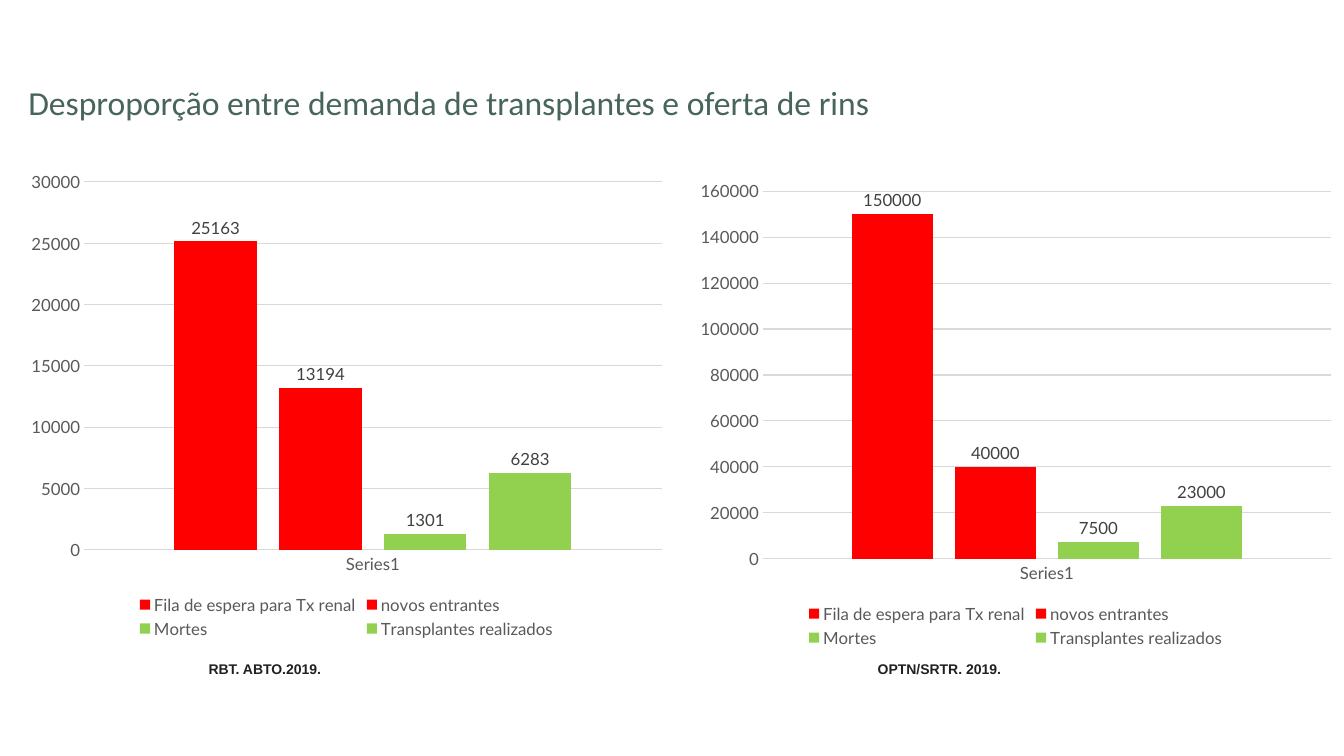
from dataclasses import dataclass

from pptx import Presentation
from pptx.chart.data import CategoryChartData
from pptx.dml.color import RGBColor
from pptx.enum.chart import XL_CHART_TYPE, XL_LABEL_POSITION, XL_LEGEND_POSITION, XL_TICK_MARK
from pptx.enum.text import MSO_ANCHOR, MSO_AUTO_SIZE, PP_ALIGN
from pptx.util import Pt

COLUMNS = XL_CHART_TYPE.COLUMN_CLUSTERED
LABEL_ABOVE = XL_LABEL_POSITION.OUTSIDE_END
LEGEND_BELOW = XL_LEGEND_POSITION.BOTTOM
NO_TICK = XL_TICK_MARK.NONE
TOP = MSO_ANCHOR.TOP
NO_AUTOFIT = MSO_AUTO_SIZE.NONE
LEFT = PP_ALIGN.LEFT


@dataclass(frozen=True)
class Theme:
    """Colours, fonts and type sizes of the slide."""
    title_color: str = "476559"
    axis_color: str = "595959"
    label_color: str = "404040"
    source_color: str = "212121"
    grid_color: str = "D9D9D9"
    demand_color: str = "FF0000"
    supply_color: str = "92D050"
    title_font: str = "Calibri"
    chart_font: str = "Lato"
    source_font: str = "Arial"
    title_size: float = 24
    chart_size: float = 12
    source_size: float = 10


THEME = Theme()
SERIES = (
    ("Fila de espera para Tx renal", THEME.demand_color),
    ("novos entrantes", THEME.demand_color),
    ("Mortes", THEME.supply_color),
    ("Transplantes realizados", THEME.supply_color),
)
PANELS = (
    (13, 116, (25163, 13194, 1301, 6283), 30000, 5000, "RBT. ABTO.2019."),
    (491, 122.5, (150000, 40000, 7500, 23000), 160000, 20000, "OPTN/SRTR. 2019."),
)
SOURCE_OFFSET = 126


def style_font(font, name, size, color, bold=False):
    """Apply a typeface, size, colour and weight to a font."""
    font.name = name
    font.size = Pt(size)
    font.bold = bold
    font.color.rgb = RGBColor.from_string(color)


def style_chart_font(font, color=THEME.axis_color):
    """Apply the common chart typeface and size."""
    style_font(font, THEME.chart_font, THEME.chart_size, color)


def style_line(line):
    """Draw a thin line in the grid colour."""
    line.color.rgb = RGBColor.from_string(THEME.grid_color)
    line.width = Pt(0.75)


def add_title(slide, text):
    """Fill and place the title placeholder."""
    title = slide.shapes.title
    title.left, title.top, title.width, title.height = Pt(13), Pt(22.5), Pt(652), Pt(80)
    frame = title.text_frame
    frame.text = text
    frame.auto_size = NO_AUTOFIT
    frame.vertical_anchor = TOP
    paragraph = frame.paragraphs[0]
    paragraph.alignment = LEFT
    paragraph.line_spacing = Pt(61.3)
    style_font(paragraph.runs[0].font, THEME.title_font, THEME.title_size, THEME.title_color)


def style_axes(chart, maximum, step):
    """Format both axes and the horizontal grid."""
    for axis in (chart.category_axis, chart.value_axis):
        axis.major_tick_mark = NO_TICK
        axis.minor_tick_mark = NO_TICK
        style_chart_font(axis.tick_labels.font)
    style_line(chart.category_axis.format.line)
    value_axis = chart.value_axis
    value_axis.minimum_scale = 0
    value_axis.maximum_scale = maximum
    value_axis.major_unit = step
    value_axis.format.line.fill.background()
    style_line(value_axis.major_gridlines.format.line)


def style_series(series, color):
    """Colour one series and show its values above the bars."""
    series.invert_if_negative = False
    series.format.fill.solid()
    series.format.fill.fore_color.rgb = RGBColor.from_string(color)
    labels = series.data_labels
    labels.show_value = True
    labels.position = LABEL_ABOVE
    style_chart_font(labels.font, THEME.label_color)


def add_column_chart(slide, left, top, values, maximum, step):
    """Add a column chart of transplant demand and supply."""
    data = CategoryChartData(number_format="General")
    data.categories = ["Series1"]
    for (name, _), value in zip(SERIES, values):
        data.add_series(name, [value])
    frame = slide.shapes.add_chart(COLUMNS, Pt(left), Pt(top), Pt(469), Pt(343), data)
    chart = frame.chart
    chart.has_title = False
    style_chart_font(chart.font)
    chart.has_legend = True
    chart.legend.position = LEGEND_BELOW
    chart.legend.include_in_layout = False
    style_chart_font(chart.legend.font)
    style_axes(chart, maximum, step)
    plot = chart.plots[0]
    plot.gap_width = 219
    plot.overlap = -27
    plot.vary_by_categories = False
    for series, (_, color) in zip(plot.series, SERIES):
        style_series(series, color)


def add_source(slide, left, text):
    """Add the data source below a chart."""
    box = slide.shapes.add_textbox(Pt(left), Pt(468), Pt(108), Pt(29.5))
    frame = box.text_frame
    frame.word_wrap = True
    frame.margin_left = Pt(10)
    frame.text = text
    style_font(frame.paragraphs[0].runs[0].font, THEME.source_font,
               THEME.source_size, THEME.source_color, bold=True)


def main():
    """Build and save the slide."""
    presentation = Presentation()
    presentation.slide_width = Pt(960)
    presentation.slide_height = Pt(540)
    slide = presentation.slides.add_slide(presentation.slide_layouts[5])
    add_title(slide, "Desproporção entre demanda de transplantes e oferta de rins")
    for left, top, values, maximum, step, source in PANELS:
        add_column_chart(slide, left, top, values, maximum, step)
        add_source(slide, left + SOURCE_OFFSET, source)
    presentation.save("out.pptx")


if __name__ == "__main__":
    main()
